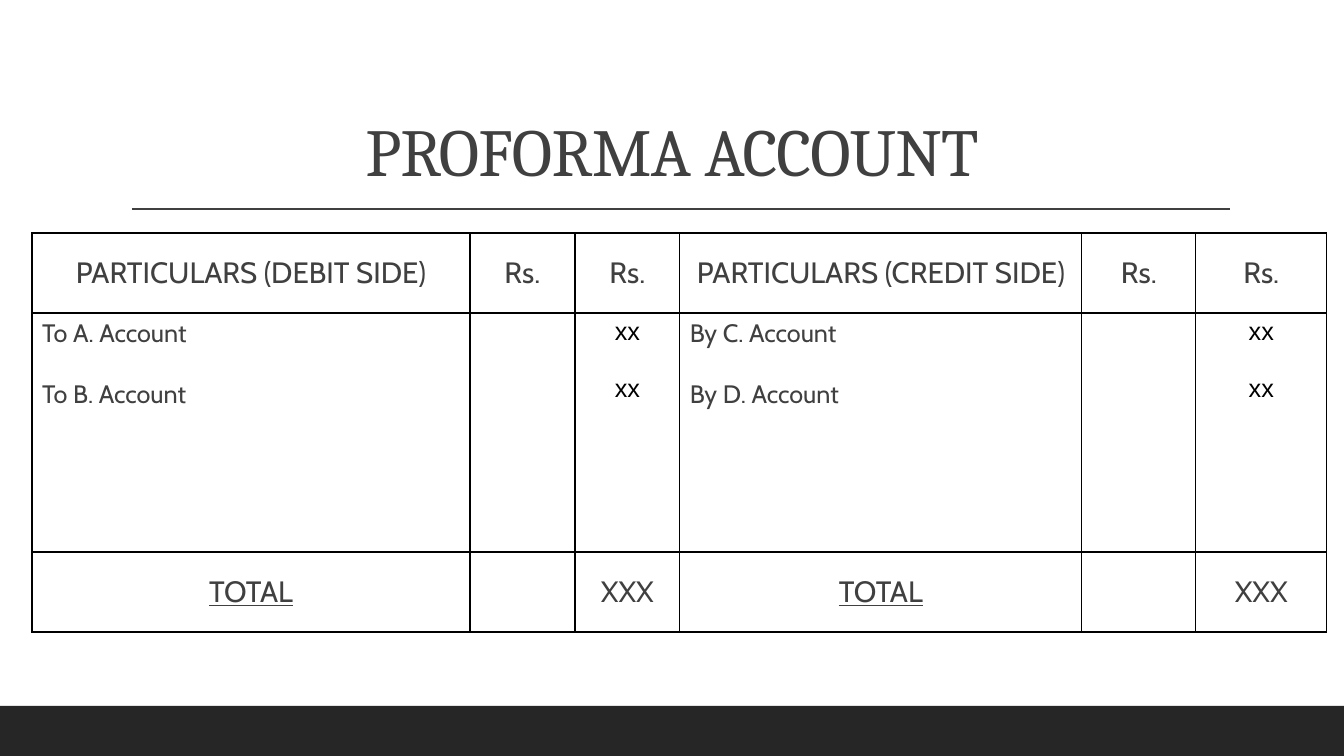
from dataclasses import dataclass
from itertools import product

from lxml.etree import SubElement
from pptx import Presentation
from pptx.dml.color import RGBColor
from pptx.enum.shapes import MSO_CONNECTOR as Connector, MSO_SHAPE as Shape
from pptx.enum.text import MSO_ANCHOR as Anchor, PP_ALIGN as Align
from pptx.oxml.ns import qn
from pptx.slide import Slide
from pptx.table import _Cell as Cell
from pptx.util import Pt

EMU_PER_INCH = 914400
PX_PER_INCH = 100.8


def px(length: int) -> int:
    return round(length * EMU_PER_INCH / PX_PER_INCH)


@dataclass(frozen=True)
class Theme:
    ink: str = "404040"
    black: str = "000000"
    footer: str = "262626"
    title_font: str = "Cambria"
    body_font: str = "Cabin"
    amount_font: str = "Arial"
    title_size: int = 48
    heading_size: int = 21
    entry_size: int = 18
    line_width: int = 1


THEME = Theme()


@dataclass(frozen=True)
class CellStyle:
    size: int = THEME.heading_size
    font: str = THEME.body_font
    color: str = THEME.ink
    align: Align = Align.CENTER
    anchor: Anchor = Anchor.MIDDLE
    underline: bool = False
    gap: int = 0  # points between paragraphs


HEADING = CellStyle()
TOTAL = CellStyle(underline=True)
ENTRY = CellStyle(THEME.entry_size, align=Align.LEFT, anchor=Anchor.TOP, gap=22)
AMOUNT = CellStyle(THEME.entry_size, THEME.amount_font, THEME.black,
                   anchor=Anchor.TOP, gap=20)


@dataclass(frozen=True)
class AccountSide:
    heading: str
    entries: tuple[str, ...]
    widths: tuple[int, int, int]


SIDES = (
    AccountSide("PARTICULARS (DEBIT SIDE)", ("To A. Account", "To B. Account"),
                (438, 105, 105)),
    AccountSide("PARTICULARS (CREDIT SIDE)", ("By C. Account", "By D. Account"),
                (402, 114, 131)),
)
ROW_HEIGHTS = (80, 239, 80)


def rgb(color: str) -> RGBColor:
    return RGBColor.from_string(color)


def add_footer(slide: Slide) -> None:
    footer = slide.shapes.add_shape(Shape.RECTANGLE, 0, px(706), px(1344), px(50))
    footer.shadow.inherit = False
    footer.fill.solid()
    footer.fill.fore_color.rgb = rgb(THEME.footer)
    footer.line.fill.background()


def add_rule(slide: Slide) -> None:
    rule = slide.shapes.add_connector(Connector.STRAIGHT, px(132), px(209), px(1230), px(209))
    rule.line.color.rgb = rgb(THEME.ink)
    rule.line.width = Pt(THEME.line_width)
    SubElement(rule._element.spPr, qn("a:effectLst"))


def add_title(slide: Slide, text: str) -> None:
    frame = slide.shapes.add_textbox(0, px(103), px(1344), px(93)).text_frame
    frame.word_wrap = True
    frame.vertical_anchor = Anchor.BOTTOM
    paragraph = frame.paragraphs[0]
    paragraph.alignment = Align.CENTER
    paragraph.line_spacing = 0.9
    run = paragraph.add_run()
    run.text = text
    run.font.name = THEME.title_font
    run.font.size = Pt(THEME.title_size)
    run.font.color.rgb = rgb(THEME.ink)
    run.font._element.set("spc", "-50")


def outline(cell: Cell) -> None:
    properties = cell._tc.get_or_add_tcPr()
    for edge in ("lnL", "lnR", "lnT", "lnB"):
        line = SubElement(properties, qn(f"a:{edge}"), w=str(Pt(THEME.line_width)))
        fill = SubElement(line, qn("a:solidFill"))
        SubElement(fill, qn("a:srgbClr"), val=THEME.black)
    cell.fill.background()


def write(cell: Cell, lines: tuple[str, ...], style: CellStyle) -> None:
    cell.vertical_anchor = style.anchor
    cell.text = "\n".join(lines)
    for index, paragraph in enumerate(cell.text_frame.paragraphs):
        paragraph.alignment = style.align
        if index:
            paragraph.space_before = Pt(style.gap)
        font = paragraph.font
        font.name = style.font
        font.size = Pt(style.size)
        font.color.rgb = rgb(style.color)
        if style.underline:
            font.underline = True


def add_account(slide: Slide) -> None:
    widths = [width for side in SIDES for width in side.widths]
    table = slide.shapes.add_table(
        len(ROW_HEIGHTS), len(widths), px(32), px(233),
        px(sum(widths)), px(sum(ROW_HEIGHTS))).table
    table.first_row = table.horz_banding = False
    for column, width in zip(table.columns, widths):
        column.width = px(width)
    for row, height in zip(table.rows, ROW_HEIGHTS):
        row.height = px(height)
    for row, column in product(range(len(ROW_HEIGHTS)), range(len(widths))):
        outline(table.cell(row, column))

    # Each side: particulars, inner amounts, outer amounts
    for number, side in enumerate(SIDES):
        first = number * len(side.widths)
        last = first + len(side.widths) - 1
        write(table.cell(0, first), (side.heading,), HEADING)
        for column in range(first + 1, last + 1):
            write(table.cell(0, column), ("Rs.",), HEADING)
        write(table.cell(1, first), side.entries, ENTRY)
        write(table.cell(1, last), ("xx",) * len(side.entries), AMOUNT)
        write(table.cell(2, first), ("TOTAL",), TOTAL)
        write(table.cell(2, last), ("XXX",), HEADING)


def main() -> None:
    presentation = Presentation()
    presentation.slide_width, presentation.slide_height = px(1344), px(756)
    slide = presentation.slides.add_slide(presentation.slide_layouts[6])

    # Frame of the page
    add_footer(slide)
    add_rule(slide)

    # Content
    add_title(slide, "PROFORMA ACCOUNT")
    add_account(slide)
    presentation.save("out.pptx")


if __name__ == "__main__":
    main()
